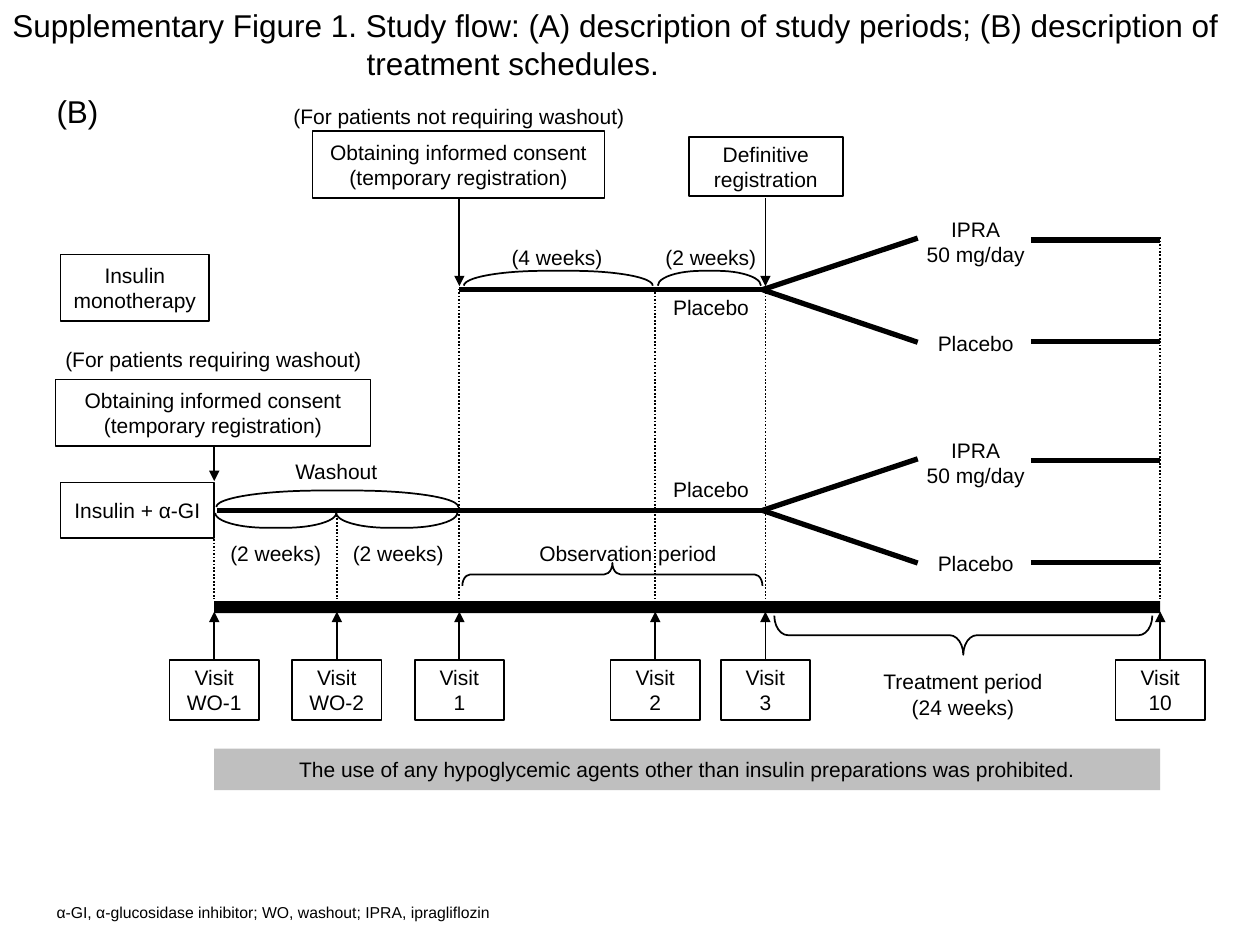
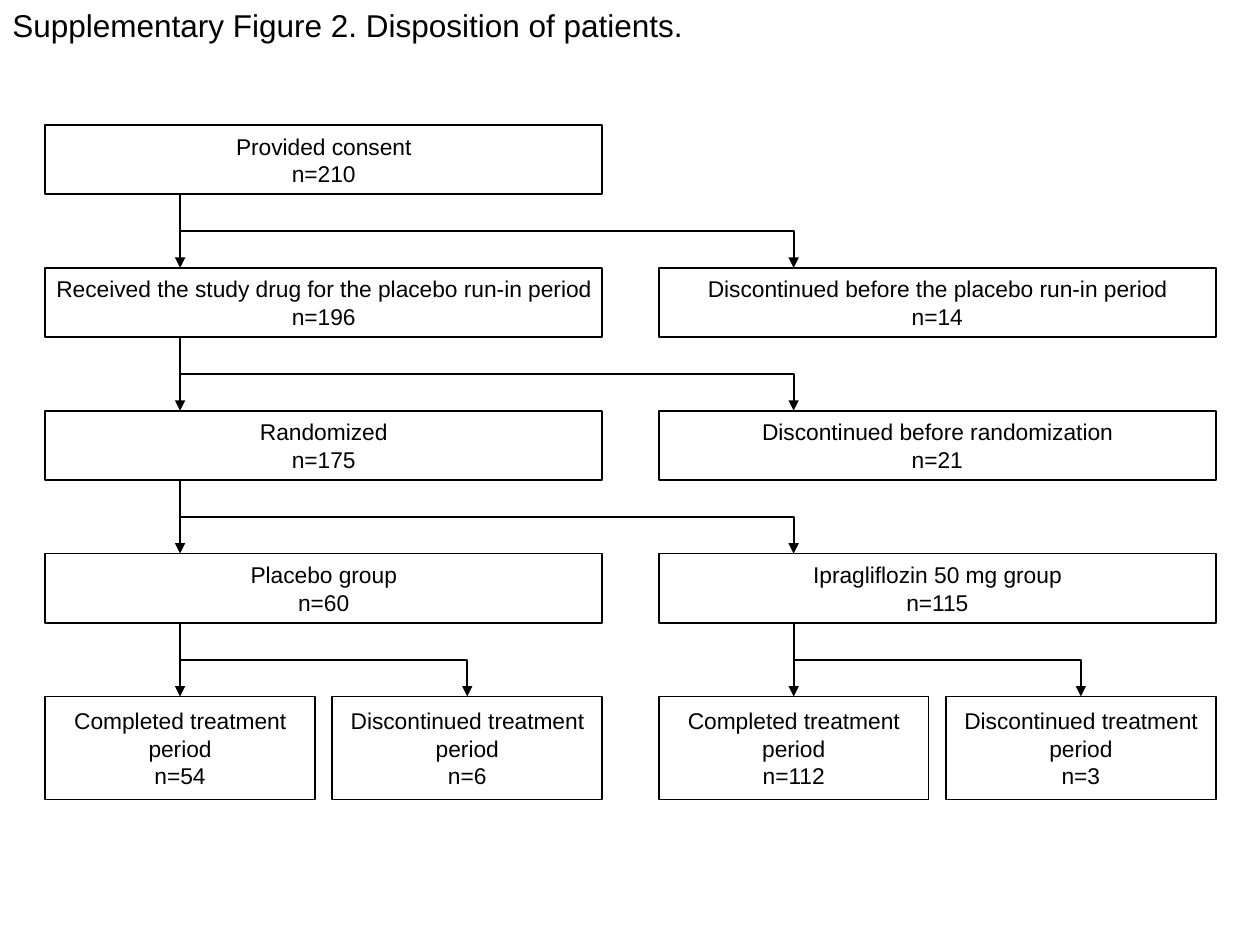
"""Build the study flow and patient disposition slides."""
from lxml import etree
from pptx import Presentation
from pptx.dml.color import RGBColor
from pptx.enum.dml import MSO_LINE
from pptx.enum.shapes import MSO_CONNECTOR, MSO_SHAPE
from pptx.enum.text import MSO_ANCHOR, MSO_AUTO_SIZE, PP_ALIGN
from pptx.oxml.ns import qn
from pptx.util import Cm, Pt

RECT, BRACE, BRACKET = MSO_SHAPE.RECTANGLE, MSO_SHAPE.LEFT_BRACE, MSO_SHAPE.LEFT_BRACKET
STRAIGHT, ELBOW = MSO_CONNECTOR.STRAIGHT, MSO_CONNECTOR.ELBOW
DOTTED = MSO_LINE.ROUND_DOT
TOP, MIDDLE, BOTTOM = MSO_ANCHOR.TOP, MSO_ANCHOR.MIDDLE, MSO_ANCHOR.BOTTOM
LEFT, CENTER = PP_ALIGN.LEFT, PP_ALIGN.CENTER
NO_AUTOFIT = MSO_AUTO_SIZE.NONE
COLORS = {"ink": "000000", "paper": "FFFFFF", "notice": "BFBFBF"}
FONT = "Arial"
SLIDE_W, SLIDE_H = 25.4, 19.05
UP, DOWN = 90, 270

FLOW_TITLE = ("Supplementary Figure 1. Study flow: (A) description of study periods; "
              "(B) description of treatment schedules.")
ABBREVIATIONS = "α-GI, α-glucosidase inhibitor; WO, washout; IPRA, ipragliflozin"
NOTICE = "The use of any hypoglycemic agents other than insulin preparations was prohibited."
CONSENT = ["Obtaining informed consent", "(temporary registration)"]

VISITS = [("WO-1", 4.32, 10.24), ("WO-2", 6.79, 10.24), ("1", 9.26, 5.82),
          ("2", 13.21, 5.82), ("3", 15.43, 5.82), ("10", 23.39, 4.78)]
FIRST_X, RANDOMIZED_X, LAST_X = VISITS[0][1], VISITS[4][1], VISITS[-1][1]
ARMS = [(9.26, 5.84), (4.37, 10.29)]
TREATMENTS = [(["IPRA", "50 mg/day"], 2.51, -1.6, -1.04, -1.0),
              (["Placebo"], 2.06, 0.69, 1.06, 1.05)]
TREATMENT_X = 19.67

STAGES = [
    (["Insulin", "monotherapy"], 1.22, 5.13, 3.0, 1.35),
    (["Insulin + α-GI"], 1.22, 9.73, 3.1, 1.12),
    (CONSENT, 1.12, 7.65, 6.35, 1.35),
    (CONSENT, 6.3, 2.64, 5.89, 1.35),
    (["Definitive", "registration"], 13.89, 2.77, 3.1, 1.19),
]
STAGE_ARROWS = [(4.32, 8.99, 9.7), (9.26, 3.99, 5.77), (15.43, 3.99, 5.77)]
SPANS = [
    (BRACE, UP, 9.32, 11.35, 6.05, 0.46),
    (BRACE, DOWN, 15.61, 12.41, 7.62, 0.79),
    (BRACKET, DOWN, 4.34, 10.34, 2.44, 0.3),
    (BRACKET, DOWN, 6.78, 10.34, 2.44, 0.3),
    (BRACKET, UP, 4.36, 9.89, 4.88, 0.33),
    (BRACKET, UP, 9.35, 5.46, 3.81, 0.3),
    (BRACKET, UP, 13.26, 5.46, 2.08, 0.3),
]
PADDED_LABELS = [
    (["Treatment period", "(24 weeks)"], 17.55, 13.36, 3.73),
    (["(For patients requiring washout)"], 1.04, 6.86, 6.53),
    (["(For patients not requiring washout)"], 5.38, 1.96, 7.75),
    (["Washout"], 5.61, 9.12, 2.34),
]
TIGHT_LABELS = [
    (["(2 weeks)"], 4.57, 10.9, 1.98),
    (["(2 weeks)"], 7.04, 10.9, 1.98),
    (["Observation period"], 10.74, 10.9, 3.84),
    (["Placebo"], 13.51, 9.6, 1.65),
    (["Placebo"], 13.51, 5.94, 1.65),
    (["(4 weeks)"], 10.24, 4.93, 1.98),
    (["(2 weeks)"], 13.34, 4.93, 1.98),
]

DISPOSITION_TITLE = "Supplementary Figure 2. Disposition of patients."
DISPOSITION = [
    [("Provided consent", 210)],
    [("Received the study drug for the placebo run-in period", 196),
     ("Discontinued before the placebo run-in period", 14)],
    [("Randomized", 175), ("Discontinued before randomization", 21)],
    [("Placebo group", 60), ("Ipragliflozin 50 mg group", 115)],
]
OUTCOMES = [(54, 6), (112, 3)]
OUTCOME_NAMES = ("Completed treatment\nperiod", "Discontinued treatment\nperiod")
COLUMN_X, COLUMN_W = (0.91, 13.28), 11.23
ROW_TOP, ROW_PITCH, ROW_H = 2.52, 2.88, 1.4
OUTCOME_W, OUTCOME_H = 5.44, 2.08


def color(name):
    return RGBColor.from_string(COLORS[name])


def write(frame, lines, size, align=CENTER, anchor=MIDDLE, inset=0.1, wrap=True):
    frame.word_wrap = wrap
    frame.auto_size = NO_AUTOFIT
    frame.vertical_anchor = anchor
    frame.margin_left = frame.margin_right = Cm(inset)
    frame.margin_top = frame.margin_bottom = Cm(inset / 2)
    for number, line in enumerate(lines):
        paragraph = frame.add_paragraph() if number else frame.paragraphs[0]
        paragraph.alignment = align
        for part_number, part in enumerate(line.split("\n")):
            if part_number:
                paragraph.add_line_break()
            run = paragraph.add_run()
            run.text = part
            run.font.name = FONT
            run.font.size = Pt(size)
            run.font.color.rgb = color("ink")


def add_title(slide, text, height):
    title = slide.shapes.title
    title.left, title.top, title.width, title.height = 0, 0, Cm(SLIDE_W), Cm(height)
    write(title.text_frame, [text], 18, LEFT, TOP, 0.25)
    props = title.text_frame.paragraphs[0]._p.get_or_add_pPr()
    props.set("marL", str(Cm(7.14)))
    props.set("indent", str(-Cm(7.14)))


def add_text(slide, lines, left, top, width, height, size=12, **style):
    box = slide.shapes.add_textbox(Cm(left), Cm(top), Cm(width), Cm(height))
    write(box.text_frame, lines, size, **style)


def add_label(slide, lines, left, top, width, inset):
    height = 0.51 * len(lines) + inset
    add_text(slide, lines, left, top, width, height, anchor=TOP, inset=inset, wrap=False)


def add_box(slide, lines, left, top, width, height, size=12, fill="paper", outlined=True):
    box = slide.shapes.add_shape(RECT, Cm(left), Cm(top), Cm(width), Cm(height))
    box.shadow.inherit = False
    box.fill.solid()
    box.fill.fore_color.rgb = color(fill)
    if outlined:
        box.line.color.rgb = color("ink")
        box.line.width = Pt(1)
    else:
        box.line.fill.background()
    write(box.text_frame, lines, size)


def add_line(slide, x1, y1, x2, y2, weight=1, dash=None, arrow=False, kind=STRAIGHT):
    line = slide.shapes.add_connector(kind, Cm(x1), Cm(y1), Cm(x2), Cm(y2))
    line.line.color.rgb = color("ink")
    line.line.width = Pt(weight)
    if dash:
        line.line.dash_style = dash
    props = line._element.spPr
    if arrow:
        etree.SubElement(props.find(qn("a:ln")), qn("a:tailEnd"), type="triangle")
    etree.SubElement(props, qn("a:effectLst"))
    return line


def add_branch(slide, x1, y1, x2, y2):
    mid_x, mid_y = (x1 + x2) / 2, (y1 + y2) / 2
    half_w, half_h = (y2 - y1) / 2, (x2 - x1) / 2
    branch = add_line(slide, mid_x - half_w, mid_y - half_h, mid_x + half_w, mid_y + half_h,
                      arrow=True, kind=ELBOW)
    frame = branch._element.spPr.find(qn("a:xfrm"))
    frame.set("rot", str(270 * 60000))
    frame.set("flipH", "1")


def add_span(slide, kind, direction, left, top, length, depth):
    shift = (length - depth) / 2
    span = slide.shapes.add_shape(kind, Cm(left + shift), Cm(top - shift), Cm(depth), Cm(length))
    span.rotation = direction
    span.adjustments[0] = 0.35 if kind == BRACE else 0.43 * length / depth
    span.shadow.inherit = False
    span.fill.background()
    span.line.color.rgb = color("ink")
    span.line.width = Pt(1)


def build_flow(slide):
    add_title(slide, FLOW_TITLE, 1.8)
    add_text(slide, ["(B)"], 0.89, 1.73, 1.6, 1.02, 18, align=LEFT, anchor=TOP, inset=0.25)
    add_text(slide, [ABBREVIATIONS], 0.89, 17.68, 23.6, 1.02, 9,
             align=LEFT, anchor=BOTTOM, inset=0.25)
    period = LAST_X - FIRST_X
    add_box(slide, [NOTICE], FIRST_X, 15.09, period, 0.84, fill="notice", outlined=False)
    for start_x, y in ARMS:
        add_line(slide, start_x, y, RANDOMIZED_X, y, 3)
        for lines, width, label_dy, branch_dy, dose_dy in TREATMENTS:
            add_line(slide, 15.37, y, 18.5, y + branch_dy, 3)
            add_line(slide, 20.78, y + dose_dy, LAST_X, y + dose_dy, 3)
            add_label(slide, lines, TREATMENT_X - width / 2, y + label_dy, width, 0.25)
    for stage in STAGES:
        add_box(slide, *stage)
    add_box(slide, [], FIRST_X, 12.12, period, 0.24, fill="ink", outlined=False)
    for visit, x, dots_top in VISITS:
        add_box(slide, ["Visit", visit], x - 0.9, 13.31, 1.8, 1.2)
        add_line(slide, x, dots_top, x, 12.07, dash=DOTTED)
        add_line(slide, x, 13.31, x, 12.33, arrow=True)
    for x, start_y, end_y in STAGE_ARROWS:
        add_line(slide, x, start_y, x, end_y, arrow=True)
    for span in SPANS:
        add_span(slide, *span)
    for labels, inset in ((PADDED_LABELS, 0.25), (TIGHT_LABELS, 0)):
        for label in labels:
            add_label(slide, *label, inset)


def build_disposition(slide):
    add_title(slide, DISPOSITION_TITLE, 1.03)
    stem = OUTCOME_W / 2
    for row, groups in enumerate(DISPOSITION):
        top = ROW_TOP + row * ROW_PITCH
        for x, (name, count) in zip(COLUMN_X, groups):
            add_box(slide, [name, f"n={count}"], x, top, COLUMN_W, ROW_H, 13)
        if row:
            start_y = top - ROW_PITCH + ROW_H
            left_x, right_x = (x + stem for x in COLUMN_X)
            add_line(slide, left_x, start_y, left_x, top, arrow=True)
            add_branch(slide, left_x, start_y, right_x, top)
    top = ROW_TOP + len(DISPOSITION) * ROW_PITCH
    start_y = top - ROW_PITCH + ROW_H
    step = COLUMN_W - OUTCOME_W
    for x, counts in zip(COLUMN_X, OUTCOMES):
        for place, (name, count) in enumerate(zip(OUTCOME_NAMES, counts)):
            add_box(slide, [name, f"n={count}"], x + place * step, top, OUTCOME_W, OUTCOME_H, 13)
        add_line(slide, x + stem, start_y, x + stem, top, arrow=True)
        add_branch(slide, x + stem, start_y, x + step + stem, top)


def main():
    deck = Presentation()
    deck.slide_width, deck.slide_height = Cm(SLIDE_W), Cm(SLIDE_H)
    title_only = deck.slide_layouts[5]
    for build in (build_flow, build_disposition):
        build(deck.slides.add_slide(title_only))
    deck.save("out.pptx")


if __name__ == "__main__":
    main()
